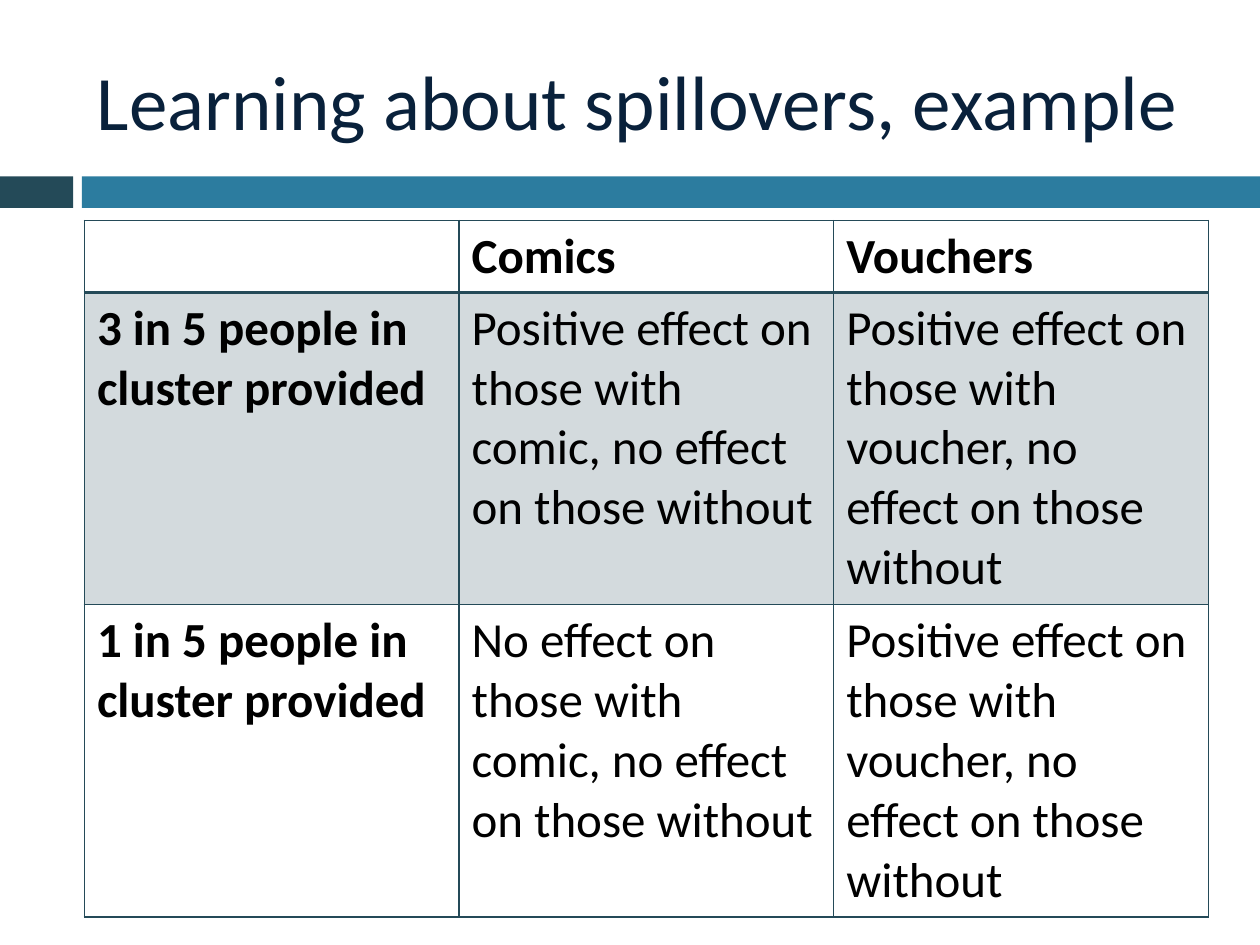
from dataclasses import dataclass
from typing import Optional

from lxml import etree
from pptx import Presentation
from pptx.dml.color import RGBColor
from pptx.enum import shapes, text
from pptx.oxml import ns
from pptx.util import Inches, Pt

NAVY = RGBColor(0x09, 0x21, 0x3B)
SLATE = RGBColor(0x24, 0x4A, 0x58)
TEAL = RGBColor(0x2C, 0x7C, 0x9F)
BLACK = RGBColor(0x00, 0x00, 0x00)
FONT = "Calibri"
LEFT, CONTENT_WIDTH = 0.67, 8.92
BAND_OPACITY = 20  # percent


@dataclass
class Bar:
    left: float
    width: float
    color: RGBColor


@dataclass
class Row:
    height: float
    cells: tuple
    bold_columns: tuple
    bottom_line: int = 1
    top_line: int = 1
    fill: Optional[RGBColor] = None


BARS = [Bar(0, 0.58, SLATE), Bar(0.65, 9.35, TEAL)]

ROWS = [
    Row(0.57, ("", "Comics", "Vouchers"), (0, 1, 2), bottom_line=2),
    Row(2.48, ("3 in 5 people in cluster provided",
               "Positive effect on those with comic, no effect on those without",
               "Positive effect on those with voucher, no effect on those without"),
        (0,), top_line=2, fill=SLATE),
    Row(2.48, ("1 in 5 people in cluster provided",
               "No effect on those with comic, no effect on those without",
               "Positive effect on those with voucher, no effect on those without"),
        (0,)),
]


def write(frame, words: str, size: int, color: RGBColor, bold: bool = False) -> None:
    run = frame.paragraphs[0].add_run()
    run.text = words
    run.font.color.rgb = color
    for name, value in {"name": FONT, "size": Pt(size), "bold": bold}.items():
        setattr(run.font, name, value)


def draw_bar(slide, bar: Bar) -> None:
    shape = slide.shapes.add_shape(
        shapes.MSO_SHAPE.RECTANGLE,
        Inches(bar.left), Inches(1.4), Inches(bar.width), Inches(0.25))
    shape.shadow.inherit = False
    shape.fill.solid()
    shape.fill.fore_color.rgb = bar.color
    shape.line.fill.background()


def draw_title(slide, words: str) -> None:
    box = slide.shapes.add_textbox(
        Inches(LEFT), Inches(0.25), Inches(CONTENT_WIDTH), Inches(1.08))
    settings = {"word_wrap": True, "vertical_anchor": text.MSO_ANCHOR.MIDDLE}
    for name, value in settings.items():
        setattr(box.text_frame, name, value)
    write(box.text_frame, words, 44, NAVY)


def add_borders(cell, row: Row) -> None:
    properties = cell._tc.get_or_add_tcPr()
    widths = {"lnL": 1, "lnR": 1, "lnT": row.top_line, "lnB": row.bottom_line}
    for side, width in widths.items():
        line = etree.SubElement(properties, ns.qn(f"a:{side}"), w=str(Pt(width)))
        solid = etree.SubElement(line, ns.qn("a:solidFill"))
        etree.SubElement(solid, ns.qn("a:srgbClr"), val=str(SLATE))


def fill_cell(cell, color: Optional[RGBColor]) -> None:
    if color is None:
        cell.fill.background()
        return
    cell.fill.solid()
    cell.fill.fore_color.rgb = color
    tint = cell._tc.tcPr.find(f"{ns.qn('a:solidFill')}/{ns.qn('a:srgbClr')}")
    etree.SubElement(tint, ns.qn("a:alpha"), val=str(BAND_OPACITY * 1000))


def draw_table(slide, rows: list) -> None:
    column_count = len(rows[0].cells)
    table = slide.shapes.add_table(
        len(rows), column_count, Inches(LEFT), Inches(1.75),
        Inches(CONTENT_WIDTH), Inches(sum(row.height for row in rows))).table
    for name, value in {"first_row": False, "horz_banding": False}.items():
        setattr(table, name, value)
    for r, row in enumerate(rows):
        table.rows[r].height = Inches(row.height)
        for c, words in enumerate(row.cells):
            cell = table.cell(r, c)
            add_borders(cell, row)
            fill_cell(cell, row.fill)
            if words:
                write(cell.text_frame, words, 28, BLACK, c in row.bold_columns)


def main() -> None:
    deck = Presentation()
    deck.slide_width, deck.slide_height = Inches(10), Inches(7.5)
    slide = deck.slides.add_slide(deck.slide_layouts[6])

    # Divider under the title
    for bar in BARS:
        draw_bar(slide, bar)

    # Title and comparison table
    draw_title(slide, "Learning about spillovers, example")
    draw_table(slide, ROWS)

    deck.save("out.pptx")


if __name__ == "__main__":
    main()
